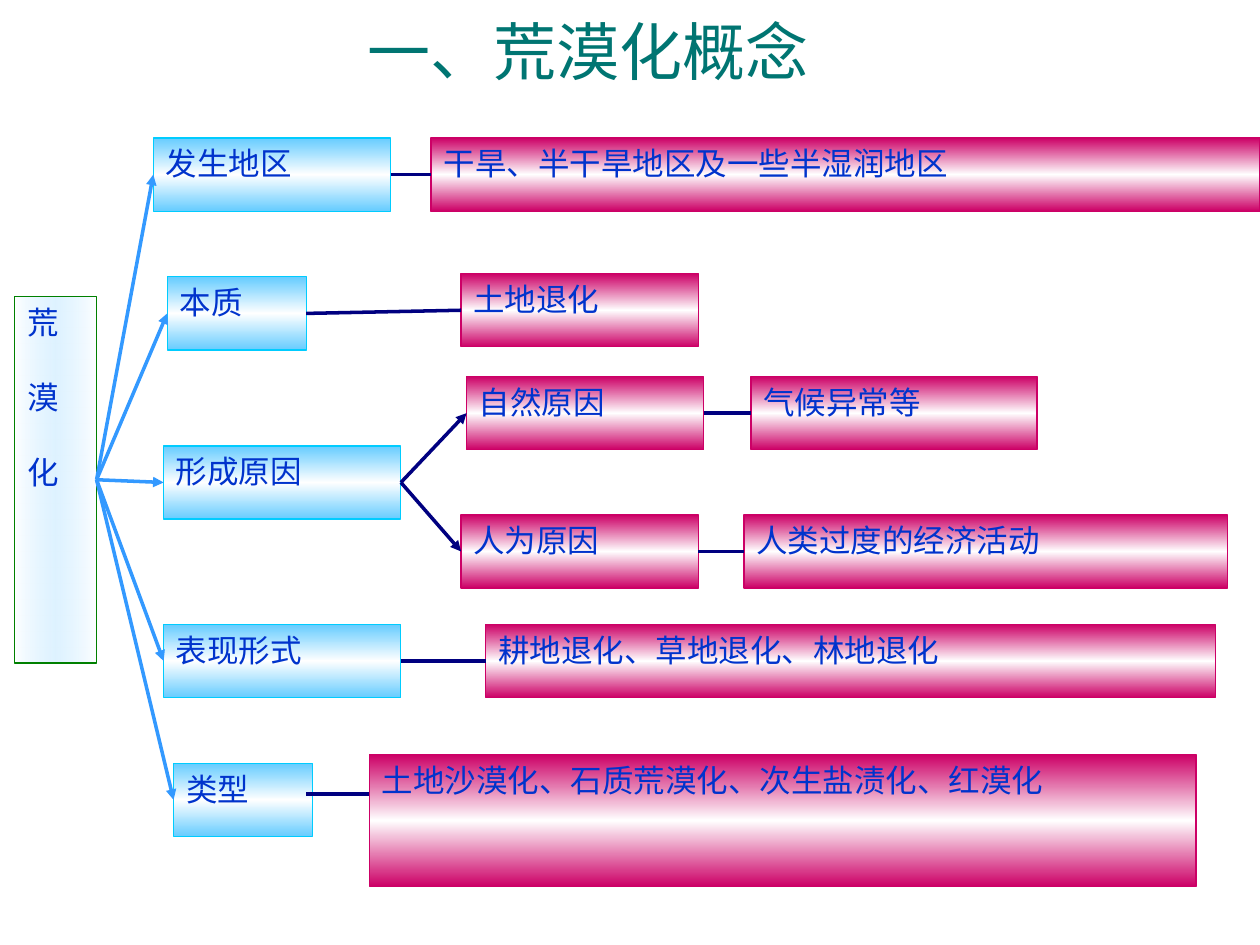
from pptx import Presentation
from pptx.dml.color import RGBColor
from pptx.enum.shapes import MSO_CONNECTOR, MSO_SHAPE
from pptx.enum.text import MSO_ANCHOR, PP_ALIGN
from pptx.oxml import parse_xml
from pptx.oxml.ns import nsdecls
from pptx.util import Pt

RECT = MSO_SHAPE.RECTANGLE
LINE = MSO_CONNECTOR.STRAIGHT
TOP, MIDDLE = MSO_ANCHOR.TOP, MSO_ANCHOR.MIDDLE
LEFT, CENTER = PP_ALIGN.LEFT, PP_ALIGN.CENTER
WEST, EAST = 1, 3

COLORS = {
    "title": "007572", "text": "0033CC", "white": "FFFFFF",
    "root": "CCECFF", "green": "008000", "sky": "66CCFF",
    "cyan": "00CCFF", "pink": "CC0066", "arrow": "3399FF", "navy": "000080",
}
STYLES = {
    "root": {"ends": "white", "mid": "root", "alpha": 63, "angle": 0, "line": "green"},
    "topic": {"ends": "sky", "mid": "white", "alpha": 100, "angle": 90, "line": "cyan"},
    "detail": {"ends": "pink", "mid": "white", "alpha": 100, "angle": 90, "line": "pink"},
}
ROW = 41.8


def color(name):
    return RGBColor.from_string(COLORS[name])


def apply(item, values):
    for key, value in values.items():
        setattr(item, key, value)


def blend(shape, style):
    ends, mid = COLORS[style["ends"]], COLORS[style["mid"]]
    stops = "".join(
        f'<a:gs pos="{pos * 1000}"><a:srgbClr val="{tone}">'
        f'<a:alpha val="{alpha * 1000}"/></a:srgbClr></a:gs>'
        for pos, tone, alpha in ((0, ends, 100), (50, mid, style["alpha"]), (100, ends, 100))
    )
    shape.fill.gradient()
    grad = shape.fill._xPr.gradFill
    grad.getparent().replace(grad, parse_xml(
        f'<a:gradFill {nsdecls("a")} rotWithShape="1"><a:gsLst>{stops}</a:gsLst>'
        f'<a:lin ang="{style["angle"] * 60000}" scaled="1"/></a:gradFill>'))


def add_box(slide, kind, text, box, gap=0):
    style = STYLES[kind]
    shape = slide.shapes.add_shape(RECT, *map(Pt, box))
    shape.shadow.inherit = False
    blend(shape, style)
    shape.line.color.rgb = color(style["line"])
    shape.line.width = Pt(0.75)
    frame = shape.text_frame
    apply(frame, {"word_wrap": True, "vertical_anchor": TOP, "text": text})
    for part in frame.paragraphs:
        apply(part, {"alignment": LEFT, "space_after": Pt(gap)})
        apply(part.font, {"size": Pt(18), "name": "Arial"})
        part.font.color.rgb = color("text")
    return shape


def add_line(slide, tone, start=None, end=None, ends=(0, 0, 0, 0), head=False):
    link = slide.shapes.add_connector(LINE, *map(Pt, ends))
    if start is not None:
        link.begin_connect(start, EAST)
        link.end_connect(end, WEST)
    link.line.color.rgb = color(tone)
    link.line.width = Pt(2)
    if head:
        link.line._get_or_add_ln().append(
            parse_xml(f'<a:tailEnd {nsdecls("a")} type="triangle"/>'))
    link._element.spPr.append(parse_xml(f'<a:effectLst {nsdecls("a")}/>'))


def add_title(slide, text, box):
    title = slide.shapes.title
    apply(title, dict(zip(("left", "top", "width", "height"), map(Pt, box))))
    frame = title.text_frame
    apply(frame, {"text": text, "vertical_anchor": MIDDLE, "word_wrap": True})
    part = frame.paragraphs[0]
    part.alignment = CENTER
    apply(part.font, {"size": Pt(36), "name": "Noto Sans CJK SC"})
    part.font.color.rgb = color("title")
    fonts = part.runs[0].font._element
    fonts.append(parse_xml(f'<a:ea {nsdecls("a")} typeface="Noto Sans CJK SC"/>'))


def add_topics(slide, root):
    spots = {
        "发生地区": (87.6, 78.9, 135.6), "本质": (95.6, 158.2, 79.4),
        "形成原因": (93.5, 254.8, 135.6), "表现形式": (93.5, 356.8, 135.6),
        "类型": (99.2, 436.2, 79.4),
    }
    topics = {}
    for text, spot in spots.items():
        topics[text] = add_box(slide, "topic", text, (*spot, ROW))
        add_line(slide, "arrow", root, topics[text], head=True)
    return topics


def add_details(slide, topics):
    spots = (
        ("发生地区", "干旱、半干旱地区及一些半湿润地区", (246.4, 78.9, 473.6)),
        ("本质", "土地退化", (263.5, 156.4, 135.6)),
        ("表现形式", "耕地退化、草地退化、林地退化", (277.6, 356.8, 416.9)),
    )
    for topic, text, spot in spots:
        detail = add_box(slide, "detail", text, (*spot, ROW))
        add_line(slide, "navy", topics[topic], detail)


def add_causes(slide, topic):
    pairs = (
        ("自然原因", "气候异常等", 215.2, 266.6, 429.2, 163.4),
        ("人为原因", "人类过度的经济活动", 294.2, 263.5, 425.2, 276.4),
    )
    for cause, text, top, near, far, width in pairs:
        reason = add_box(slide, "detail", cause, (near, top, 135.6, ROW))
        result = add_box(slide, "detail", text, (far, top, width, ROW))
        add_line(slide, "navy", topic, reason, head=True)
        add_line(slide, "navy", reason, result)


def add_types(slide, box):
    left = box[0]
    add_box(slide, "detail", "土地沙漠化、石质荒漠化、次生盐渍化、红漠化", box)
    add_line(slide, "navy", ends=(left - 36, 453.6, left, 453.6))


def main():
    deck = Presentation()
    apply(deck, {"slide_width": Pt(720), "slide_height": Pt(540)})
    slide = deck.slides.add_slide(deck.slide_layouts[5])
    add_title(slide, "一、荒漠化概念", (12.2, 3.6, 648, 50.4))
    root = add_box(slide, "root", "荒\n漠\n化", (8.4, 169.4, 46.8, 209.5), gap=21.5)
    topics = add_topics(slide, root)
    add_details(slide, topics)
    add_causes(slide, topics["形成原因"])
    add_types(slide, (211, 431.2, 472.4, 75.4))
    deck.save("out.pptx")


if __name__ == "__main__":
    main()
